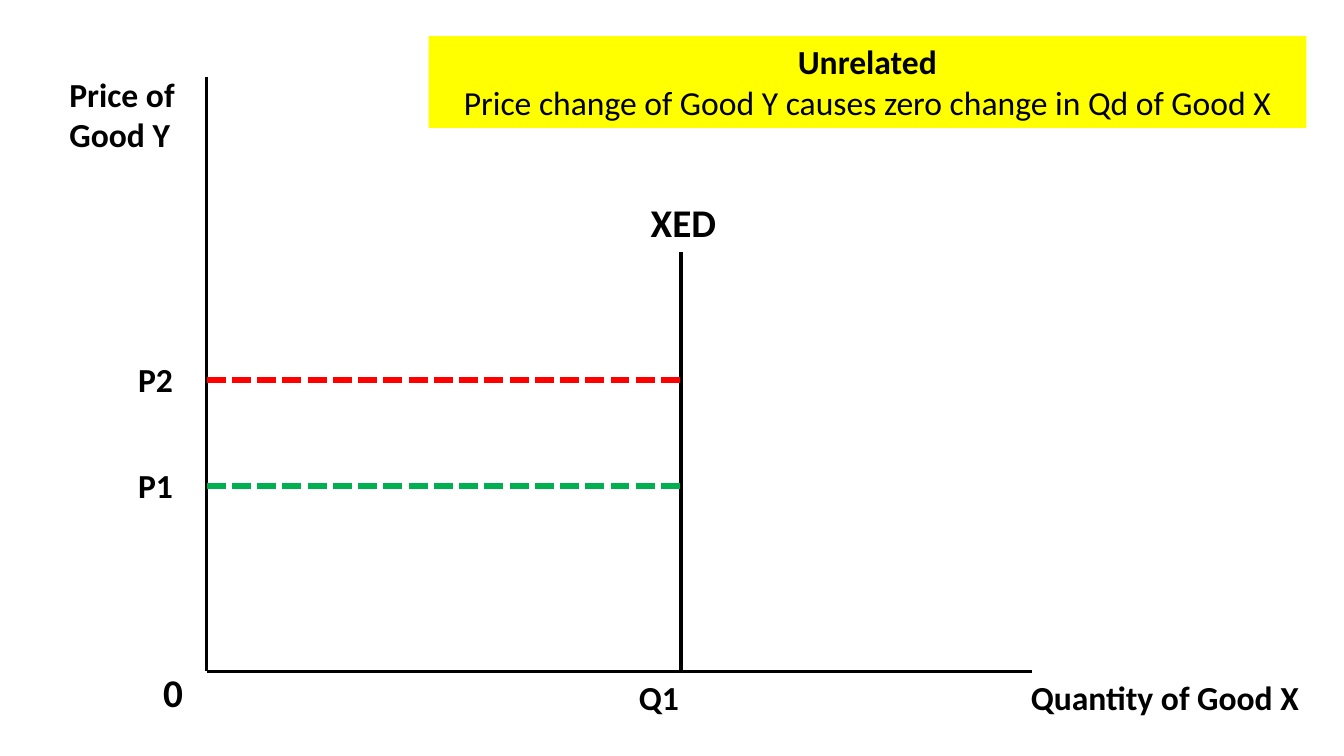
from dataclasses import dataclass

from lxml import etree
from pptx import Presentation
from pptx.dml.color import RGBColor
from pptx.enum import dml, shapes, text
from pptx.oxml import ns
from pptx.slide import Slide
from pptx.text.text import _Paragraph
from pptx.util import Cm, Pt

FONT = "Calibri"
BLACK, RED, GREEN, YELLOW = "000000", "FF0000", "00B050", "FFFF00"

# Diagram coordinates in centimetres
AXIS_X, AXIS_TOP = 5.21, 1.93
AXIS_Y, AXIS_RIGHT = 16.92, 26.01
DEMAND_X, DEMAND_TOP = 17.17, 6.35
P2_Y, P1_Y = 9.58, 12.24
PRICE_LEFT, PRICE_WIDTH, PRICE_RISE = 3.23, 1.98, 0.65


@dataclass
class Line:
    start: tuple[float, float]
    end: tuple[float, float]
    width: float
    color: str = BLACK
    dashed: bool = False


@dataclass
class Label:
    wording: str
    left: float
    top: float
    width: float
    height: float = 1.27
    size: int = 24


LINES = [
    Line((AXIS_X, AXIS_TOP), (AXIS_X, AXIS_Y), 2.5),
    Line((AXIS_RIGHT, AXIS_Y), (AXIS_X, AXIS_Y), 2.5),
    Line((DEMAND_X, AXIS_Y), (DEMAND_X, DEMAND_TOP), 3),
    Line((AXIS_X, P2_Y), (DEMAND_X, P2_Y), 4.5, RED, True),
    Line((AXIS_X, P1_Y), (DEMAND_X, P1_Y), 4.5, GREEN, True),
]

LABELS = [
    Label("Price of\vGood Y", 1.5, 1.73, 3.99, 2.31),
    Label("Quantity of Good X", 25.73, AXIS_Y, 7.47),
    Label("0", 3.86, 16.71, 1.07, 1.45, 28),
    Label("XED", 16.15, 4.88, 3, 1.45, 28),
    Label("P2", PRICE_LEFT, P2_Y - PRICE_RISE, PRICE_WIDTH),
    Label("P1", PRICE_LEFT, P1_Y - PRICE_RISE, PRICE_WIDTH),
    Label("Q1", 15.85, 16.94, 2.13),
]


def rgb(color: str) -> RGBColor:
    return RGBColor.from_string(color)


def format_runs(paragraph: _Paragraph, size: int, bold: bool) -> None:
    for run in paragraph.runs:
        run.font.name = FONT
        run.font.size = Pt(size)
        run.font.bold = bold
        run.font.color.rgb = rgb(BLACK)


def draw_line(slide: Slide, line: Line) -> None:
    connector = slide.shapes.add_connector(
        shapes.MSO_CONNECTOR.STRAIGHT,
        *(Cm(value) for value in line.start + line.end),
    )
    connector.line.color.rgb = rgb(line.color)
    connector.line.width = Pt(line.width)
    if line.dashed:
        # SQUARE_DOT is written to the file as sysDash
        connector.line.dash_style = dml.MSO_LINE.SQUARE_DOT
    etree.SubElement(connector._element.spPr, ns.qn("a:effectLst"))


def draw_label(slide: Slide, label: Label) -> None:
    box = slide.shapes.add_textbox(
        Cm(label.left), Cm(label.top), Cm(label.width), Cm(label.height)
    )
    frame = box.text_frame
    frame.word_wrap = True
    frame.auto_size = text.MSO_AUTO_SIZE.SHAPE_TO_FIT_TEXT
    frame.text = label.wording
    format_runs(frame.paragraphs[0], label.size, True)


def fill_title(slide: Slide) -> None:
    """Turn the title placeholder into the yellow banner."""
    title = slide.shapes.title
    title.left, title.top = Cm(10.8), Cm(0.91)
    title.width, title.height = Cm(22.12), Cm(2.31)
    title.fill.solid()
    title.fill.fore_color.rgb = rgb(YELLOW)
    frame = title.text_frame
    frame.word_wrap = True
    frame.auto_size = text.MSO_AUTO_SIZE.SHAPE_TO_FIT_TEXT
    frame.vertical_anchor = text.MSO_ANCHOR.TOP
    frame.text = (
        "Unrelated\nPrice change of Good Y causes zero change in Qd of Good X"
    )
    for paragraph, bold in zip(frame.paragraphs, (True, False)):
        paragraph.alignment = text.PP_ALIGN.CENTER
        format_runs(paragraph, 24, bold)


def main() -> None:
    presentation = Presentation()
    presentation.slide_width, presentation.slide_height = Cm(33.87), Cm(19.05)
    title_only = presentation.slide_layouts.get_by_name("Title Only")
    slide = presentation.slides.add_slide(title_only)
    fill_title(slide)
    for line in LINES:
        draw_line(slide, line)
    for label in LABELS:
        draw_label(slide, label)
    presentation.save("out.pptx")


if __name__ == "__main__":
    main()
